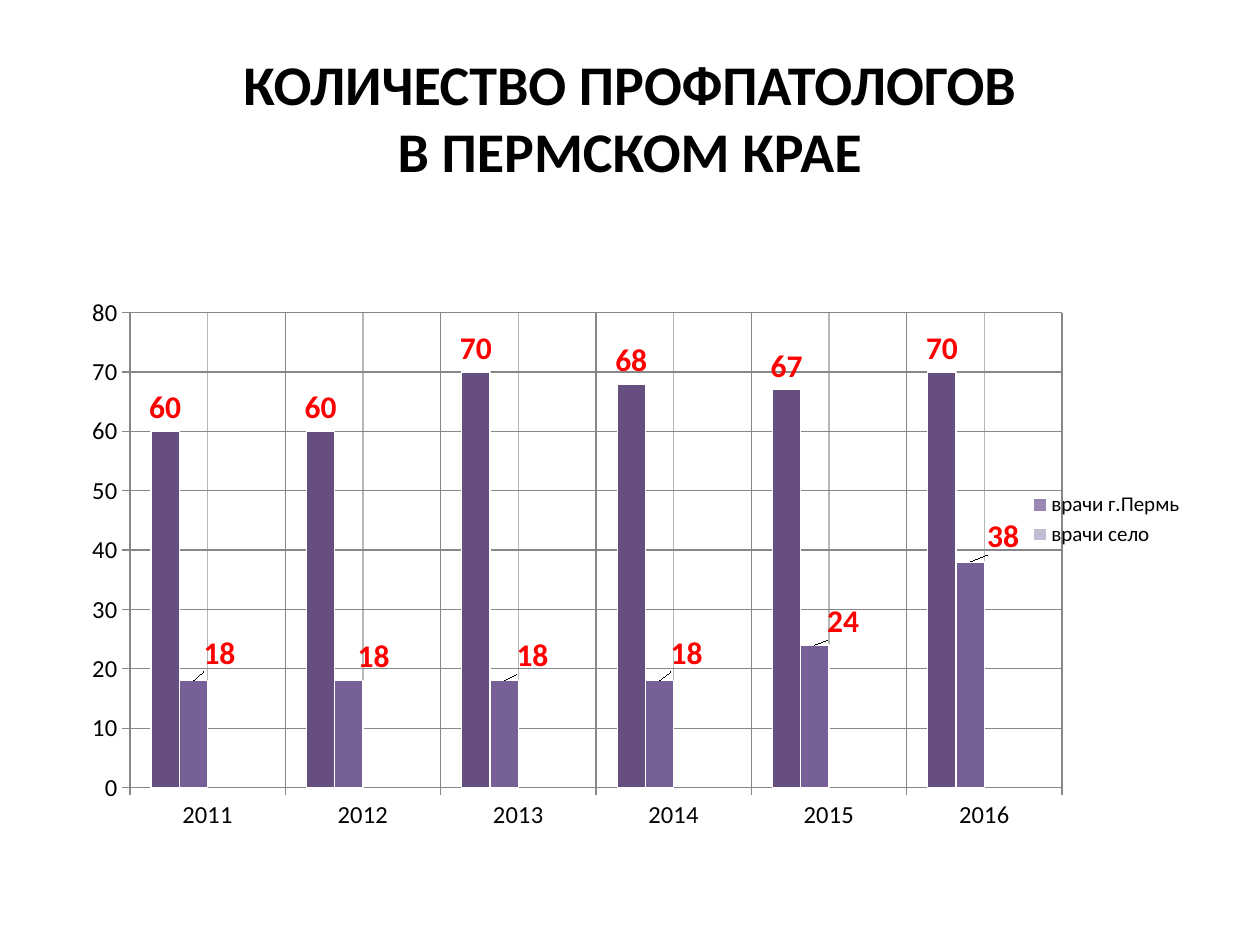
from dataclasses import dataclass

from lxml.etree import SubElement
from pptx import Presentation
from pptx.chart.data import CategoryChartData
from pptx.dml.color import RGBColor
from pptx.enum.chart import XL_CHART_TYPE, XL_LABEL_POSITION, XL_LEGEND_POSITION, XL_TICK_MARK
from pptx.enum.text import MSO_ANCHOR, PP_ALIGN
from pptx.oxml import parse_xml
from pptx.oxml.ns import nsdecls, qn
from pptx.util import Inches, Pt

FONT = "Calibri"
BLACK, WHITE, RED, GRID = "000000", "FFFFFF", "FF0000", "878787"
YEARS = ("2011", "2012", "2013", "2014", "2015", "2016")


@dataclass(frozen=True)
class DoctorSeries:
    name: str
    color: str
    counts: tuple = (None,) * len(YEARS)
    in_legend: bool = True


DOCTORS = (
    DoctorSeries("Series 1", "664E80", (60, 60, 70, 68, 67, 70), False),
    DoctorSeries("Series 2", "775F98", (18, 18, 18, 18, 24, 38), False),
    DoctorSeries("врачи г.Пермь", "9A87B5"),
    DoctorSeries("врачи село", "C0BBD2"),
)
# Label shifts of the second series, in percent of the chart's width and height
RURAL_SHIFTS = ((2.3, -0.6), (2.2, 0), (2.5, -0.2), (2.4, -0.6), (2.5, 0), (2.9, -0.3))


def rgb(color: str) -> RGBColor:
    return RGBColor.from_string(color)


def style_font(font, size: float, color: str = BLACK, bold: bool = False) -> None:
    font.name, font.size, font.bold = FONT, Pt(size), bold
    font.color.rgb = rgb(color)


def add_text(slide, text: str, left: float, top: float, width: float, height: float,
             *, size: float, color: str = BLACK, bold: bool = False) -> None:
    frame = slide.shapes.add_textbox(
        Inches(left), Inches(top), Inches(width), Inches(height)).text_frame
    frame.word_wrap = True
    frame.vertical_anchor = MSO_ANCHOR.MIDDLE
    paragraph = frame.paragraphs[0]
    paragraph.text = text
    paragraph.alignment = PP_ALIGN.CENTER
    for run in paragraph.runs:
        style_font(run.font, size, color, bold)


def manual_layout(**settings):
    layout = parse_xml(f"<c:layout {nsdecls('c')}><c:manualLayout/></c:layout>")
    for tag, value in settings.items():
        SubElement(layout[0], qn(f"c:{tag}")).set("val", str(value))
    return layout


def style_line(line, color: str = GRID) -> None:
    line.color.rgb = rgb(color)
    line.width = Pt(0.75)


def style_axis(axis) -> None:
    axis.major_tick_mark = XL_TICK_MARK.CROSS
    axis.has_major_gridlines = True
    style_line(axis.major_gridlines.format.line)
    style_line(axis.format.line)
    style_font(axis.tick_labels.font, 14)


def style_series(series, doctors: DoctorSeries) -> None:
    series.format.fill.solid()
    series.format.fill.fore_color.rgb = rgb(doctors.color)
    style_line(series.format.line, WHITE)
    labels = series.data_labels
    labels.show_value = True
    labels.position = XL_LABEL_POSITION.OUTSIDE_END
    style_font(labels.font, 18, RED, True)


def shift_label(series, index: int, across: float, down: float) -> None:
    label = series.points[index].data_label
    style_font(label.font, 18, RED, True)
    label.position = XL_LABEL_POSITION.OUTSIDE_END
    entry = next(item for item in series.data_labels._element.findall(qn("c:dLbl"))
                 if item.find(qn("c:idx")).get("val") == str(index))
    entry.insert(1, manual_layout(x=across / 100, y=down / 100))


def add_legend(chart) -> None:
    chart.has_legend = True
    legend = chart.legend
    legend.position = XL_LEGEND_POSITION.RIGHT
    legend.include_in_layout = False
    style_font(legend.font, 12)
    hidden = [i for i, doctors in enumerate(DOCTORS) if not doctors.in_legend]
    for place, index in enumerate(hidden, start=1):
        legend._element.insert(place, parse_xml(
            f'<c:legendEntry {nsdecls("c")}><c:idx val="{index}"/>'
            '<c:delete val="1"/></c:legendEntry>'))


def add_doctor_chart(slide) -> None:
    chart_data = CategoryChartData()
    chart_data.categories = YEARS
    for doctors in DOCTORS:
        chart_data.add_series(doctors.name, doctors.counts)
    chart = slide.shapes.add_chart(
        XL_CHART_TYPE.COLUMN_CLUSTERED, Inches(0.5), Inches(1.55),
        Inches(9), Inches(5.15), chart_data).chart
    chart.has_title = False
    style_font(chart.font, 18)

    # Plot area
    plot = chart.plots[0]
    plot.gap_width, plot.overlap = 150, 0
    plot.vary_by_categories = False
    plot_area = chart._chartSpace.chart.plotArea
    for automatic in plot_area.findall(qn("c:layout")):
        plot_area.remove(automatic)
    plot_area.insert(0, manual_layout(
        layoutTarget="inner", xMode="edge", yMode="edge", x=0.059, y=0.181, w=0.822, h=0.732))

    # Axes
    years, counts = chart.category_axis, chart.value_axis
    for axis in (years, counts):
        style_axis(axis)
    years.has_minor_gridlines = True
    counts.minimum_scale, counts.maximum_scale, counts.major_unit = 0, 80, 10

    # Columns and their labels
    for series, doctors in zip(plot.series, DOCTORS):
        style_series(series, doctors)
    for index, (across, down) in enumerate(RURAL_SHIFTS):
        shift_label(plot.series[1], index, across, down)

    add_legend(chart)


def main() -> None:
    presentation = Presentation()
    presentation.slide_width, presentation.slide_height = Inches(10), Inches(7.5)
    slide = presentation.slides.add_slide(presentation.slide_layouts[6])
    add_text(slide, "КОЛИЧЕСТВО ПРОФПАТОЛОГОВ\vВ ПЕРМСКОМ КРАЕ", 0.5, 0.3, 9, 1.25,
             size=32, bold=True)
    add_doctor_chart(slide)
    presentation.save("out.pptx")


if __name__ == "__main__":
    main()
